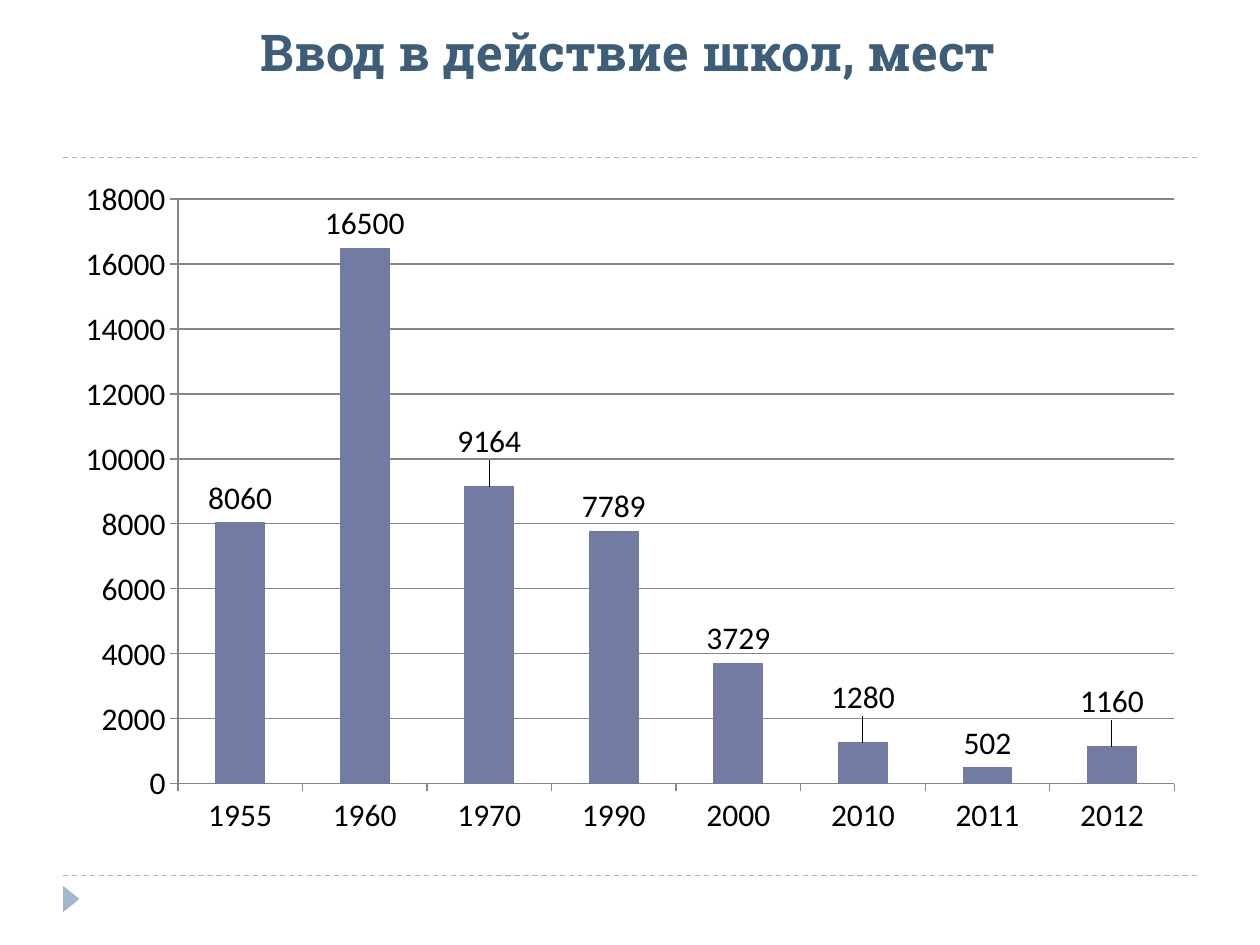
"""Build a slide with a column chart of school places opened by year."""
from lxml.etree import SubElement
from pptx import Presentation
from pptx.chart.data import CategoryChartData
from pptx.dml.color import RGBColor
from pptx.enum.chart import XL_CHART_TYPE as ChartType, XL_LABEL_POSITION as LabelPos, XL_TICK_MARK as Tick
from pptx.enum.dml import MSO_LINE
from pptx.enum.shapes import MSO_CONNECTOR as Connector, MSO_SHAPE as Shape
from pptx.enum.text import MSO_ANCHOR as Anchor, PP_ALIGN as Align
from pptx.oxml import parse_xml
from pptx.oxml.ns import nsdecls, qn
from pptx.util import Inches, Pt

TITLE_BLUE = RGBColor(0x3E, 0x5D, 0x78)
PALE_BLUE = RGBColor(0x9F, 0xB8, 0xCD)
BAR_BLUE = RGBColor(0x72, 0x7C, 0xA3)
AXIS_GREY = RGBColor(0x86, 0x86, 0x86)
BLACK = RGBColor(0, 0, 0)

PLACES = {"1955": 8060, "1960": 16500, "1970": 9164, "1990": 7789,
          "2000": 3729, "2010": 1280, "2011": 502, "2012": 1160}
RAISED_LABELS = {"1970": -0.03, "2010": -0.03, "2012": -0.03}
MARGIN, CONTENT_WIDTH = Inches(0.5), Inches(9)

deck = Presentation()
deck.slide_width, deck.slide_height = Inches(10), Inches(7.5)
slide = deck.slides.add_slide(deck.slide_layouts[5])

for rule_y in (Inches(6.95), Inches(1.25)):
    rule = slide.shapes.add_connector(Connector.STRAIGHT, MARGIN, rule_y, MARGIN + CONTENT_WIDTH, rule_y)
    rule.line.color.rgb = PALE_BLUE
    rule.line.width = Pt(0.75)
    rule.line.dash_style = MSO_LINE.DASH
    SubElement(rule._element.spPr, qn("a:effectLst"))

marker = slide.shapes.add_shape(Shape.ISOSCELES_TRIANGLE, Inches(0.46), Inches(7.07), Inches(0.21), Inches(0.13))
marker.rotation = 90
marker.shadow.inherit = False
marker.fill.solid()
marker.fill.fore_color.rgb = PALE_BLUE
marker.line.fill.background()

title = slide.shapes.title
title.left, title.top, title.width, title.height = Inches(0.49), Inches(0.13), CONTENT_WIDTH, Inches(0.57)
title.text_frame.text = "Ввод в действие школ, мест"
title.text_frame.vertical_anchor = Anchor.BOTTOM
heading = title.text_frame.paragraphs[0]
heading.alignment = Align.CENTER
heading_font = heading.runs[0].font
heading_font.name, heading_font.size, heading_font.bold = "Roboto Slab", Pt(29), True
heading_font.color.rgb = TITLE_BLUE

school_data = CategoryChartData()
school_data.categories = list(PLACES)
school_data.add_series("Series 1", list(PLACES.values()))
chart = slide.shapes.add_chart(ChartType.COLUMN_CLUSTERED, MARGIN, Inches(1.32),
                               CONTENT_WIDTH, Inches(5.41), school_data).chart
chart.has_legend = False
chart.has_title = False
chart.font.name, chart.font.size = "Calibri", Pt(18)
chart.font.color.rgb = BLACK

for axis in (chart.category_axis, chart.value_axis):
    axis.major_tick_mark = Tick.OUTSIDE
    axis.minor_tick_mark = Tick.NONE
    axis.format.line.color.rgb = AXIS_GREY
chart.value_axis.minimum_scale = 0
chart.value_axis.maximum_scale = 18000
chart.value_axis.major_unit = 2000
chart.value_axis.has_major_gridlines = True
chart.value_axis.major_gridlines.format.line.color.rgb = AXIS_GREY

columns = chart.plots[0]
columns.gap_width = 150
columns.vary_by_categories = False
places = columns.series[0]
places.format.fill.solid()
places.format.fill.fore_color.rgb = BAR_BLUE
places.data_labels.show_value = True
places.data_labels.position = LabelPos.OUTSIDE_END

for year, shift in RAISED_LABELS.items():
    point = list(PLACES).index(year)
    places.points[point].data_label.position = LabelPos.OUTSIDE_END
    label = places.data_labels._element.xpath(f'c:dLbl[c:idx/@val="{point}"]')[0]
    label.insert(1, parse_xml(f'<c:layout {nsdecls("c")}><c:manualLayout><c:x val="0"/>'
                              f'<c:y val="{shift}"/></c:manualLayout></c:layout>'))

deck.save("out.pptx")
